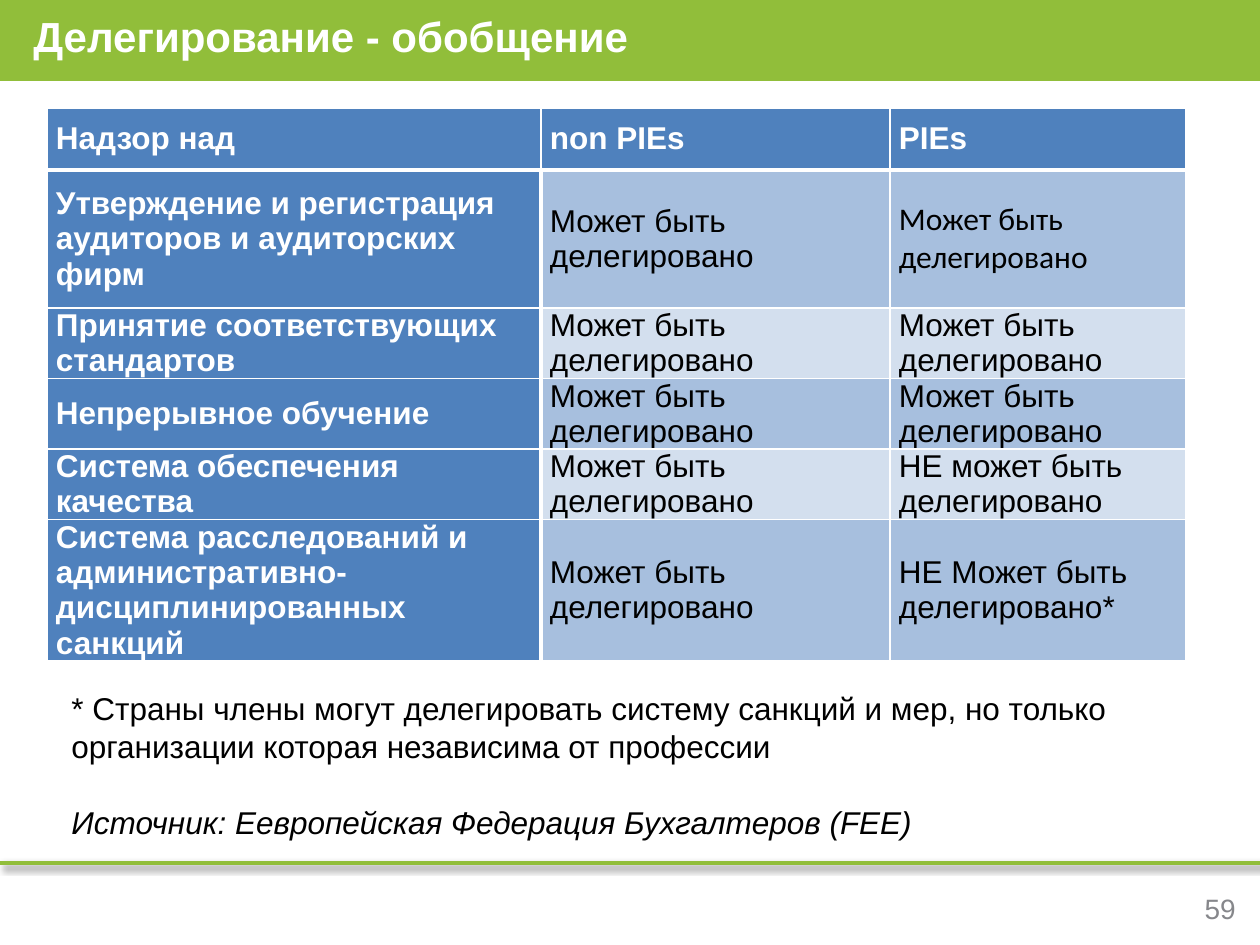
from lxml import etree
from pptx import Presentation
from pptx.dml.color import RGBColor
from pptx.enum.shapes import MSO_CONNECTOR, MSO_SHAPE
from pptx.enum.text import MSO_ANCHOR, PP_ALIGN
from pptx.oxml import parse_xml
from pptx.util import Pt

MIDDLE, TOP = MSO_ANCHOR.MIDDLE, MSO_ANCHOR.TOP
LEFT, RIGHT = PP_ALIGN.LEFT, PP_ALIGN.RIGHT
PX = 914400 / 126
NS = "http://schemas.openxmlformats.org/drawingml/2006/main"
GREEN, BLUE, WHITE, BLACK, GREY = "91BE3A", "4F81BD", "FFFFFF", "000000", "86878B"
BANDS = ["A7BFDE", "D3DFEE"]


def color(value):
    return RGBColor.from_string(value)


def write(p, text, value, **fmt):
    r = p.add_run()
    r.text = text
    r.font.color.rgb = color(value)
    for name, setting in {"name": "Arial", "size": Pt(18), **fmt}.items():
        setattr(r.font, name, setting)


prs = Presentation()
prs.slide_width, prs.slide_height = round(1260 * PX), round(945 * PX)
s = prs.slides.add_slide(prs.slide_layouts[6])

line = s.shapes.add_connector(
    MSO_CONNECTOR.STRAIGHT, 0, round(863 * PX), prs.slide_width, round(863 * PX))
line.line.color.rgb = color(GREEN)
line.line.width = Pt(2)
line._element.spPr.append(parse_xml(
    f'<a:effectLst xmlns:a="{NS}"><a:outerShdw blurRad="{Pt(4)}" dist="{Pt(3)}" '
    f'dir="2700000" algn="tl" rotWithShape="0"><a:srgbClr val="{BLACK}">'
    '<a:alpha val="40000"/></a:srgbClr></a:outerShdw></a:effectLst>'))

banner = s.shapes.add_shape(MSO_SHAPE.RECTANGLE, 0, 0, prs.slide_width, round(81 * PX))
banner.shadow.inherit = False
banner.fill.solid()
banner.fill.fore_color.rgb = color(GREEN)
banner.line.fill.background()

MAY = "Может быть делегировано"
rows = [
    ("Надзор над", "non PIEs", "PIEs"),
    ("Утверждение и регистрация аудиторов и аудиторских фирм", MAY, MAY),
    ("Принятие соответствующих стандартов", MAY, MAY),
    ("Непрерывное обучение", MAY, MAY),
    ("Система обеспечения качества", MAY, "НЕ может быть делегировано"),
    ("Система расследований и административно-дисциплинированных санкций",
     MAY, "НЕ Может быть делегировано*"),
]
widths = [494, 349, 296]
heights = [62, 138, 54, 57, 55, 106]
table = s.shapes.add_table(
    len(rows), len(widths), round(47 * PX), round(108 * PX),
    round(sum(widths) * PX), round(sum(heights) * PX)).table
for column, width in zip(table.columns, widths):
    column.width = round(width * PX)
for i, (row, height) in enumerate(zip(rows, heights)):
    table.rows[i].height = round(height * PX)
    for j, text in enumerate(row):
        cell = table.cell(i, j)
        header = i == 0 or j == 0
        cell.vertical_anchor = MIDDLE
        cell.margin_left = cell.margin_right = round(9 * PX)
        cell.margin_top = cell.margin_bottom = 0
        thick = {"lnL": i > 0 and j == 1, "lnR": i > 0 and j == 0,
                 "lnT": i == 1, "lnB": i == 0}
        for tag, wide in thick.items():
            ln = etree.SubElement(cell._tc.get_or_add_tcPr(), f"{{{NS}}}{tag}",
                                  w=str(Pt(3 if wide else 1)))
            fill = etree.SubElement(ln, f"{{{NS}}}solidFill")
            etree.SubElement(fill, f"{{{NS}}}srgbClr", val=WHITE)
        cell.fill.solid()
        cell.fill.fore_color.rgb = color(BLUE if header else BANDS[(i - 1) % 2])
        write(cell.text_frame.paragraphs[0], text, WHITE if header else BLACK,
              bold=header, name="Calibri" if (i, j) == (1, 2) else "Arial")

NOTE = ("* Страны члены могут делегировать систему санкций и мер, "
        "но только организации которая независима от профессии")
SOURCE = "Источник: Eевропейская Федерация Бухгалтеров (FEE)"
boxes = [
    ((21, -8, 1033, 88), MIDDLE, LEFT, WHITE,
     [("Делегирование - обобщение", {"size": Pt(24), "bold": True})]),
    ((1174, 883, 74, 50), MIDDLE, RIGHT, GREY, [("59", {"size": Pt(16)})]),
    ((59, 683, 1115, 165), TOP, LEFT, BLACK, [(NOTE, {}), (SOURCE, {"italic": True})]),
]
for place, anchor, align, value, paragraphs in boxes:
    tf = s.shapes.add_textbox(*(round(n * PX) for n in place)).text_frame
    tf.word_wrap = True
    tf.vertical_anchor = anchor
    for k, (text, fmt) in enumerate(paragraphs):
        p = tf.add_paragraph() if k else tf.paragraphs[0]
        p.alignment = align
        if k:
            p.space_before = Pt(22)
        write(p, text, value, **fmt)

prs.save("out.pptx")
